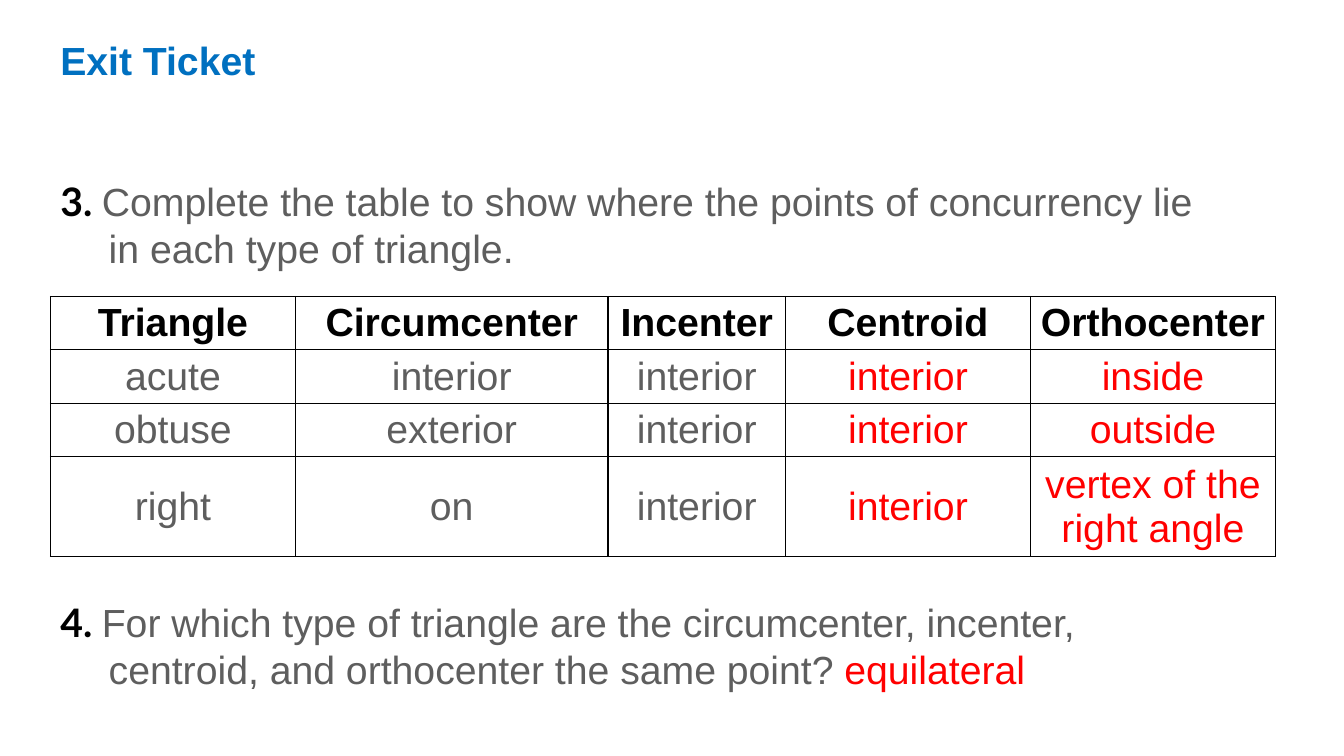
import pptx
import pptx.dml.color
import pptx.enum.text
import pptx.oxml.ns
import pptx.util
from lxml import etree
from pptx.util import Inches

BLACK = pptx.dml.color.RGBColor(0x00, 0x00, 0x00)
GRAY = pptx.dml.color.RGBColor(0x5E, 0x5E, 0x5E)
RED = pptx.dml.color.RGBColor(0xFF, 0x00, 0x00)
BLUE = pptx.dml.color.RGBColor(0x00, 0x70, 0xC0)

COLUMN_WIDTHS = [2.43, 3.1, 1.76, 2.43, 2.43]
ROW_HEIGHTS = [0.53, 0.53, 0.53, 0.96]
FIRST_ANSWER_COLUMN = 3
TRIANGLE_ROWS = [
    ["Triangle", "Circumcenter", "Incenter", "Centroid", "Orthocenter"],
    ["acute", "interior", "interior", "interior", "inside"],
    ["obtuse", "exterior", "interior", "interior", "outside"],
    ["right", "on", "interior", "interior", "vertex of the right angle"],
]


class ExitTicketSlide:
    """Holds the text style and the current slide, and adds its elements."""

    font_name = "Arial"
    number_font_name = "Lato"
    font_size = pptx.util.Pt(28)
    hanging_indent = Inches(0.48)

    def __init__(self, slide):
        self.slide = slide

    def style(self, font, color, bold=False, name=None):
        font.name = name or self.font_name
        font.size = self.font_size
        font.bold = bold
        font.color.rgb = color

    def add_text_box(self, left, top, width, height):
        shape = self.slide.shapes.add_textbox(
            Inches(left), Inches(top), Inches(width), Inches(height))
        shape.text_frame.word_wrap = True
        return shape.text_frame.paragraphs[0]

    def add_title(self, text):
        paragraph = self.add_text_box(0.5, 0.36, 7.6, 1.41)
        paragraph.text = text
        paragraph.line_spacing = 0.9
        self.style(paragraph.font, BLUE, bold=True)

    def add_question(self, top, number, question, answer=""):
        paragraph = self.add_text_box(0.5, top, 11.65, 1.04)
        properties = paragraph._p.get_or_add_pPr()
        properties.set("marL", str(self.hanging_indent))
        properties.set("indent", str(-self.hanging_indent))
        parts = [
            (number + " ", BLACK, True, self.number_font_name),
            (question, GRAY, False, self.font_name),
            (answer, RED, False, self.font_name),
        ]
        for text, color, bold, name in parts:
            if text:
                run = paragraph.add_run()
                run.text = text
                self.style(run.font, color, bold, name)

    def add_borders(self, cell):
        properties = cell._tc.get_or_add_tcPr()
        for side in ("a:lnL", "a:lnR", "a:lnT", "a:lnB"):
            line = etree.SubElement(
                properties, pptx.oxml.ns.qn(side), w=str(pptx.util.Pt(1)))
            fill = etree.SubElement(line, pptx.oxml.ns.qn("a:solidFill"))
            etree.SubElement(fill, pptx.oxml.ns.qn("a:srgbClr"), val=str(BLACK))

    def fill_cell(self, cell, text, color, bold):
        cell.text = text
        cell.vertical_anchor = pptx.enum.text.MSO_ANCHOR.MIDDLE
        cell.margin_left = cell.margin_right = Inches(0.07)
        cell.margin_top = cell.margin_bottom = Inches(0.03)
        self.add_borders(cell)
        cell.fill.background()
        paragraph = cell.text_frame.paragraphs[0]
        paragraph.alignment = pptx.enum.text.PP_ALIGN.CENTER
        self.style(paragraph.font, color, bold)

    def add_triangle_table(self, left, top):
        table = self.slide.shapes.add_table(
            len(ROW_HEIGHTS), len(COLUMN_WIDTHS), Inches(left), Inches(top),
            Inches(sum(COLUMN_WIDTHS)), Inches(sum(ROW_HEIGHTS))).table
        table.horz_banding = False
        for column, width in zip(table.columns, COLUMN_WIDTHS):
            column.width = Inches(width)
        for row, height in zip(table.rows, ROW_HEIGHTS):
            row.height = Inches(height)
        for row_index, texts in enumerate(TRIANGLE_ROWS):
            is_header = row_index == 0
            for column_index, text in enumerate(texts):
                body_color = RED if column_index >= FIRST_ANSWER_COLUMN else GRAY
                color = BLACK if is_header else body_color
                self.fill_cell(
                    table.cell(row_index, column_index), text, color, is_header)


def main():
    presentation = pptx.Presentation()
    presentation.slide_width = Inches(13.33)
    presentation.slide_height = Inches(7.5)
    slide = presentation.slides.add_slide(presentation.slide_layouts[6])
    ticket = ExitTicketSlide(slide)
    ticket.add_question(
        1.71, "3.",
        "Complete the table to show where the points of concurrency lie "
        "in each type of triangle.")
    ticket.add_question(
        5.89, "4.",
        "For which type of triangle are the circumcenter, incenter, "
        "centroid, and orthocenter the same point? ", "equilateral")
    ticket.add_title("Exit Ticket")
    ticket.add_triangle_table(0.5, 2.94)
    presentation.save("out.pptx")


if __name__ == "__main__":
    main()
